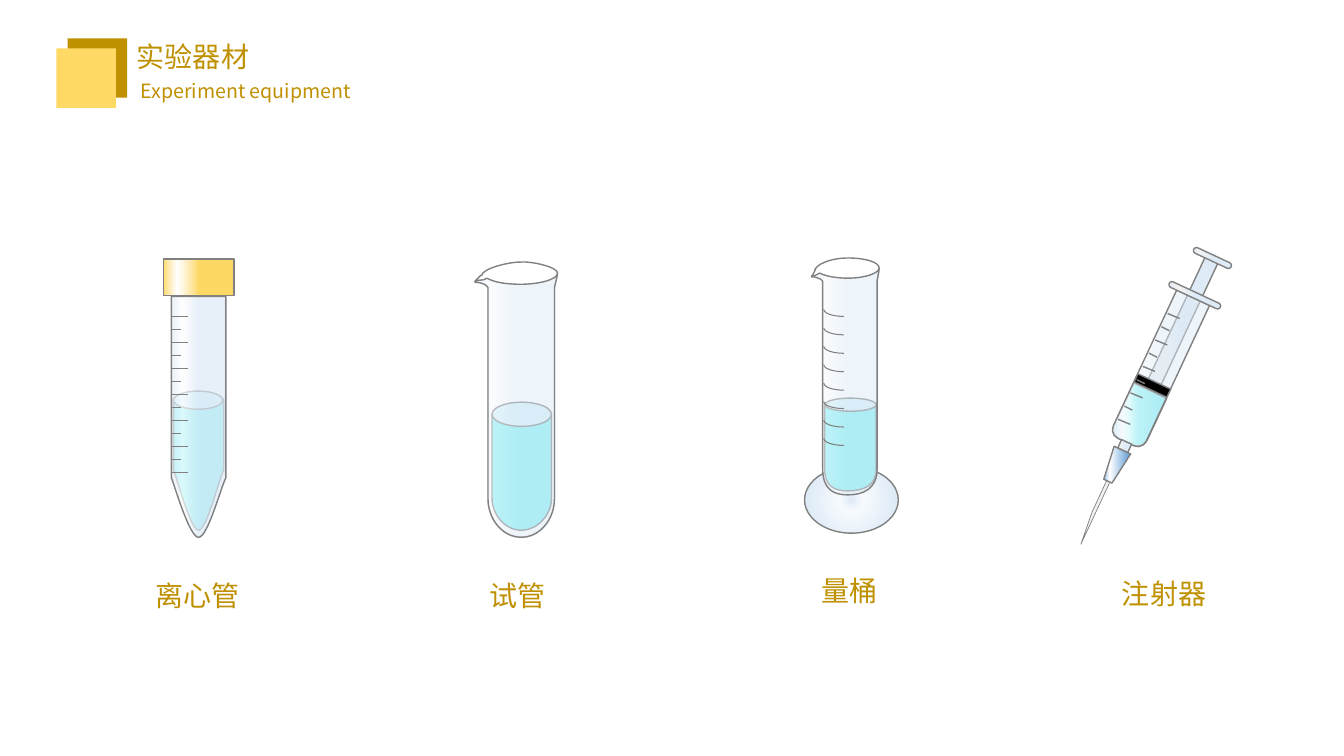
from pptx import Presentation
from pptx.dml.color import RGBColor
from pptx.enum.shapes import MSO_CONNECTOR as Connector, MSO_SHAPE as Preset
from pptx.enum.text import MSO_AUTO_SIZE as AutoSize
from pptx.oxml import parse_xml
from pptx.oxml.ns import nsdecls, qn
from pptx.util import Inches, Pt

GOLD, YELLOW, GRAY, WHITE = "BF9000", "FFD966", "808080", "FFFFFF"
LIQUID, SURFACE, PALE = "83F0F5", "D5F1FB", "DEEBF7"
CJK_FONT = "Noto Sans CJK SC"
GLASS = [(0, PALE, 50), (20, "F7FAFD", 50), (50, PALE, 50)]
CLEAR_PLASTIC = [(0, PALE, 70), (20, WHITE, 70), (50, PALE, 70)]
PLASTIC = [(0, PALE, 100), (20, "F2F2F2", 100), (50, PALE, 100)]
BARREL = [(0, PALE, 100), (20, WHITE, 50), (50, PALE, 50)]
CAP = [(0, YELLOW, 100), (20, WHITE, 70), (50, YELLOW, 100)]
DOSE = [(0, LIQUID, 100), (20, WHITE, 100), (50, LIQUID, 100)]
HUB = [(2, "5B9BD5", 100), (33, WHITE, 100), (100, "5B9BD5", 100)]
BASE = [(0, PALE, 100), (21, "F7FAFD", 100), (80, PALE, 100)]


def color(value):
    return RGBColor.from_string(value)


class Drawing:
    """Holds the style, the slide and the group that receives new elements."""

    def __init__(self, slide):
        self.slide = slide
        self.shapes = slide.shapes

    def group(self):
        self.shapes = self.slide.shapes.add_group_shape().shapes

    def paint(self, shape, fill, line, radial):
        shape.shadow.inherit = False
        if fill is None:
            shape.fill.background()
        elif isinstance(fill, str):
            shape.fill.solid()
            shape.fill.fore_color.rgb = color(fill)
        else:
            self.gradient(shape, fill, radial)
        if line:
            shape.line.color.rgb = color(GRAY)
            shape.line.width = Pt(line)
        else:
            shape.line.fill.background()

    def gradient(self, shape, stops, radial):
        shape.fill.gradient()
        properties = shape._element.spPr
        stop_xml = "".join(
            f'<a:gs pos="{position * 1000}"><a:srgbClr val="{value}">'
            f'<a:alpha val="{opacity * 1000}"/></a:srgbClr></a:gs>'
            for position, value, opacity in stops)
        direction = '<a:lin ang="0" scaled="0"/>'
        if radial:
            direction = ('<a:path path="circle"><a:fillToRect l="50000" t="50000" '
                         'r="50000" b="50000"/></a:path>')
        properties.replace(properties.find(qn("a:gradFill")), parse_xml(
            f'<a:gradFill {nsdecls("a")} rotWithShape="0">'
            f'<a:gsLst>{stop_xml}</a:gsLst>{direction}</a:gradFill>'))

    def preset(self, kind, box, fill=None, line=1, rotation=0, flip="", adjust=(), radial=False):
        shape = self.shapes.add_shape(kind, *map(Inches, box))
        for index, value in enumerate(adjust):
            shape.adjustments[index] = value
        shape.rotation = rotation
        for axis in flip:
            shape._element.spPr.xfrm.set("flip" + axis, "1")
        self.paint(shape, fill, line, radial)

    def outline(self, start, parts, fill):
        builder = self.shapes.build_freeform(*map(Inches, start), scale=1.0)
        builder.add_line_segments([tuple(map(Inches, part[-2:])) for part in parts], close=True)
        shape = builder.convert_to_shape()
        segments = list(shape._element.iter(qn("a:lnTo")))
        for segment, part in zip(segments, parts):
            if len(part) == 6:
                points = "".join(
                    f'<a:pt x="{Inches(x) - shape.left}" y="{Inches(y) - shape.top}"/>'
                    for x, y in zip(part[::2], part[1::2]))
                segment.getparent().replace(segment, parse_xml(
                    f'<a:cubicBezTo {nsdecls("a")}>{points}</a:cubicBezTo>'))
        self.paint(shape, fill, 1, False)

    def tick(self, x, y, dx, dy, width):
        line = self.shapes.add_connector(
            Connector.STRAIGHT, *map(Inches, (x, y, x + dx, y + dy)))
        line.line.color.rgb = color(GRAY)
        line.line.width = Pt(width)
        line._element.spPr.append(parse_xml(f'<a:effectLst {nsdecls("a")}/>'))

    def text(self, box, words, size, font=CJK_FONT, wrap=False):
        frame = self.slide.shapes.add_textbox(*map(Inches, box)).text_frame
        frame.word_wrap = wrap
        frame.auto_size = AutoSize.SHAPE_TO_FIT_TEXT
        run = frame.paragraphs[0].add_run()
        run.text = words
        run.font.size = Pt(size)
        run.font.name = font
        run.font.color.rgb = color(GOLD)
        run.font._element.append(parse_xml(f'<a:ea {nsdecls("a")} typeface="{CJK_FONT}"/>'))


def draw_header(drawing):
    drawing.preset(Preset.RECTANGLE, (0.67, 0.38, 0.59, 0.59), GOLD, line=0)
    drawing.preset(Preset.RECTANGLE, (0.56, 0.48, 0.59, 0.59), YELLOW, line=0)
    drawing.text((1.26, 0.34, 3.8, 0.44), "实验器材", 20, "Arial", wrap=True)
    drawing.text((1.25, 0.73, 2.58, 0.34), " Experiment equipment", 14, wrap=True)


def draw_test_tube(drawing):
    drawing.group()
    drawing.outline((4.88, 4.11), [
        (5.47, 4.11), (5.47, 4.94), (5.47, 5.11, 5.33, 5.26, 5.17, 5.26),
        (5.01, 5.26, 4.88, 5.11, 4.88, 4.94)], LIQUID)
    drawing.preset(Preset.OVAL, (4.88, 3.99, 0.59, 0.24), SURFACE)
    drawing.outline((5.29, 2.72), [
        (5.53, 2.72), (5.5, 2.85), (5.5, 4.94), (5.5, 5.16, 5.35, 5.33, 5.17, 5.33),
        (4.99, 5.33, 4.84, 5.16, 4.84, 4.94), (4.84, 2.85), (4.82, 2.83),
        (4.79, 2.81, 4.75, 2.8, 4.71, 2.8), (4.74, 2.77, 4.78, 2.75, 4.82, 2.73),
        (5.29, 2.73)], GLASS)
    drawing.outline((4.71, 2.79), [
        (4.75, 2.77, 4.79, 2.79, 4.83, 2.76), (4.9, 2.8, 5.02, 2.82, 5.16, 2.82),
        (5.36, 2.82, 5.53, 2.77, 5.53, 2.71), (5.53, 2.65, 5.28, 2.59, 5.16, 2.6),
        (5.03, 2.6, 4.78, 2.67, 4.78, 2.73), (4.77, 2.73)], WHITE)


def draw_centrifuge_tube(drawing):
    drawing.group()
    drawing.preset(Preset.RECTANGLE, (1.62, 2.57, 0.7, 0.36), CAP)
    drawing.outline((1.72, 3.96), [
        (2.22, 3.96), (2.22, 4.66), (2.17, 4.76, 2.05, 5.26, 1.97, 5.26),
        (1.89, 5.26, 1.76, 4.76, 1.72, 4.66)], LIQUID)
    drawing.preset(Preset.OVAL, (1.72, 3.88, 0.49, 0.18), SURFACE)
    drawing.outline((1.7, 2.94), [
        (2.24, 2.94), (2.24, 4.74), (2.19, 4.84, 2.06, 5.33, 1.97, 5.33),
        (1.88, 5.33, 1.74, 4.84, 1.7, 4.74)], CLEAR_PLASTIC)
    for index in range(13):
        drawing.tick(1.71, 3.14 + index * 1.55 / 12, 0.09 if index % 2 else 0.15, 0, 0.75)


def draw_cylinder(drawing):
    drawing.group()
    drawing.preset(Preset.OVAL, (7.98, 4.63, 0.93, 0.66), BASE, radial=True)
    drawing.outline((8.18, 4), [
        (8.69, 4), (8.69, 4.66), (8.69, 4.82, 8.56, 4.87, 8.41, 4.87),
        (8.27, 4.87, 8.18, 4.82, 8.18, 4.66)], LIQUID)
    drawing.preset(Preset.OVAL, (8.18, 3.95, 0.51, 0.13), SURFACE)
    drawing.outline((8.52, 2.67), [
        (8.72, 2.67), (8.7, 2.78), (8.7, 4.65), (8.7, 4.85, 8.56, 4.91, 8.41, 4.91),
        (8.26, 4.91, 8.16, 4.85, 8.16, 4.65), (8.16, 2.79), (8.14, 2.77),
        (8.12, 2.76, 8.09, 2.75, 8.05, 2.74), (8.08, 2.72, 8.12, 2.7, 8.15, 2.68),
        (8.53, 2.68)], GLASS)
    drawing.outline((8.05, 2.75), [
        (8.13, 2.71), (8.19, 2.74, 8.29, 2.76, 8.41, 2.76),
        (8.58, 2.76, 8.72, 2.71, 8.72, 2.66), (8.72, 2.6, 8.58, 2.56, 8.41, 2.56),
        (8.23, 2.56, 8.08, 2.63, 8.08, 2.69), (8.09, 2.67)], WHITE)
    for index in range(8):
        drawing.preset(Preset.ARC, (8.17, 3 + index * 1.28 / 7, 0.4, 0.14), line=0.75, flip="HV")


def draw_syringe(drawing):
    drawing.group()
    tilt = 25
    rounded = Preset.ROUND_2_SAME_RECTANGLE
    drawing.preset(rounded, (11.11, 3.85, 0.36, 0.56), DOSE, rotation=tilt, adjust=(0, 0.29))
    drawing.preset(Preset.RECTANGLE, (11.66, 2.52, 0.14, 1.35), PLASTIC, rotation=tilt)
    drawing.preset(rounded, (11.32, 2.88, 0.36, 1.58), BARREL, rotation=tilt, adjust=(0, 0.26))
    drawing.preset(Preset.DIAGONAL_STRIPE, (10.83, 4.75, 0.07, 0.68), "F2F2F2", 0.5, 19.1)
    drawing.preset(Preset.TRAPEZOID, (10.97, 4.45, 0.18, 0.34), HUB, rotation=tilt, flip="V")
    drawing.preset(Preset.RECTANGLE, (11.1, 4.38, 0.11, 0.09), PLASTIC, rotation=tilt)
    drawing.preset(Preset.RECTANGLE, (11.25, 3.78, 0.36, 0.09), "000000", rotation=tilt)
    for index in range(9):
        length = (0.08, 0.04) if index % 2 else (0.12, 0.05)
        drawing.tick(11.58 - index * 0.49 / 8, 3.11 + index * 1.05 / 8, *length, 1)
    for flange in ((11.82, 2.53, 0.41, 0.06), (11.57, 2.9, 0.56, 0.06)):
        drawing.preset(Preset.ROUNDED_RECTANGLE, flange, PLASTIC, rotation=tilt, adjust=(0.5,))


def main():
    presentation = Presentation()
    presentation.slide_width, presentation.slide_height = Inches(13.33), Inches(7.5)
    drawing = Drawing(presentation.slides.add_slide(presentation.slide_layouts[6]))
    draw_test_tube(drawing)
    for left, top, width, name in ((1.44, 5.69, 1.04, "离心管"), (4.76, 5.69, 0.76, "试管"),
                                   (8.05, 5.64, 0.76, "量桶"), (11.03, 5.67, 1.04, "注射器")):
        drawing.text((left, top, width, 0.44), name, 20)
    drawing.shapes = drawing.slide.shapes
    draw_header(drawing)
    draw_centrifuge_tube(drawing)
    draw_cylinder(drawing)
    draw_syringe(drawing)
    presentation.save("out.pptx")


if __name__ == "__main__":
    main()
